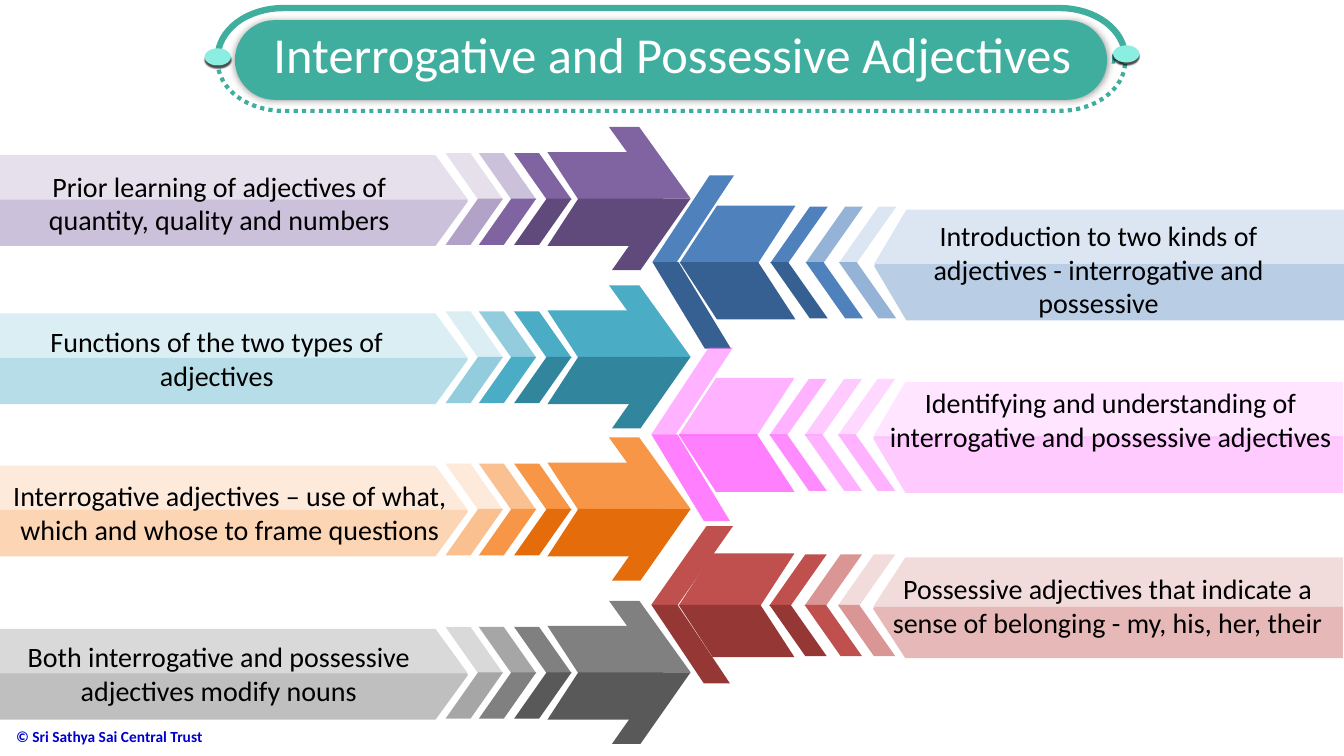
from dataclasses import dataclass
from math import cos, pi, sin

from lxml.etree import SubElement
from pptx import Presentation
from pptx.dml.color import RGBColor
from pptx.enum.dml import MSO_LINE_DASH_STYLE as Dash
from pptx.enum.shapes import MSO_SHAPE as Shape
from pptx.enum.text import MSO_ANCHOR as Anchor, MSO_AUTO_SIZE as AutoSize, PP_ALIGN as Align
from pptx.oxml.ns import qn
from pptx.util import Inches, Pt

COLOURS = {"white": "FFFFFF", "black": "000000", "green": "3FAE9E",
           "mint": "8AEFE0", "navy": "0000CC"}

# Upper and lower colours of the near, middle and far chevrons, the head and the band.
# A fourth byte gives the opacity.
ARROW_COLOURS = {
    "purple": "8064A2 604A7B CCC1DA 8064A2 E6E0EC B3A2C7 8064A2 604A7B E6E0EC CCC1DA",
    "blue": "4F81BD 376092 95B3D7 4F81BD DCE6F2 95B3D7 4F81BD 376092 DCE6F2 B9CDE5",
    "teal": "4BACC6 31859C 93CDDD 4BACC6 DBEEF4 93CDDD 4BACC6 31859C DBEEF4 B7DEE8",
    "pink": "FF99FFBF FF66FFBF FF99FF80 FF66FF80 FFCCFFBF FF99FFBF "
            "FF66FF80 FF00FF80 FFCCFF80 FF99FF80",
    "orange": "F79646 E46C0A FAC090 F79646 FDEADA FAC090 F79646 E46C0A FDEADA FCD5B5",
    "red": "C0504D 953735 D99694 C0504D F2DCDB D99694 C0504D 953735 F2DCDB E6B9B8",
    "grey": "808080 595959 A6A6A6 808080 D9D9D9 A6A6A6 808080 595959 D9D9D9 BFBFBF",
}


@dataclass(frozen=True)
class Side:
    """Horizontal layout shared by the arrows that come in from one edge."""
    mirrored: bool
    outer: float
    shoulder: float
    tip: float
    notch: float
    chevrons: tuple[float, float, float]
    heads: tuple[tuple[float, float, float], tuple[float, float, float]]  # left, width, slant
    shaft: float
    overlap: float


@dataclass(frozen=True)
class Arrow:
    side: Side
    colour: str
    top: float
    half: float
    head_height: float
    text: str
    text_frame: tuple[float, float, float, float]
    shift: float = 0


LEFT = Side(True, 0, 4.32, 4.64, 4.63, (5.1, 4.75, 4.42),
            ((6.04, 0.81, 0.718), (6.07, 0.78, 0.701)), 5.43, 0.03)
RIGHT = Side(False, 13.33, 8.99, 8.67, 8.69, (7.64, 7.99, 8.32),
             ((6.47, 0.81, 0.701), (6.47, 0.78, 0.668)), 6.74, 0.04)

ARROWS = [
    Arrow(LEFT, "purple", 1.54, 0.46, 0.71,
          "Prior learning of adjectives of quantity, quality and numbers", (0.03, 1.63, 4.29, 0.77)),
    Arrow(RIGHT, "blue", 2.08, 0.56, 0.86,
          "Introduction to two kinds of adjectives - interrogative and possessive",
          (8.67, 2.12, 4.45, 1.11)),
    Arrow(LEFT, "teal", 3.11, 0.46, 0.71,
          "Functions of the two types of adjectives", (0.01, 3.17, 4.28, 0.77)),
    Arrow(RIGHT, "pink", 3.79, 0.56, 0.86,
          "Identifying and understanding of interrogative and possessive adjectives",
          (8.71, 3.78, 4.61, 1.34), -0.01),
    Arrow(LEFT, "orange", 4.62, 0.46, 0.71,
          "Interrogative adjectives – use of what, which and whose to frame questions",
          (-0.02, 4.7, 4.6, 0.77)),
    Arrow(RIGHT, "red", 5.53, 0.51, 0.78,
          "Possessive adjectives that indicate a sense of belonging - my, his, her, their",
          (8.66, 5.62, 4.65, 0.77), -0.01),
    Arrow(LEFT, "grey", 6.24, 0.46, 0.71,
          "Both interrogative and possessive adjectives modify nouns", (0.03, 6.3, 4.28, 0.77)),
]


def paint(shape, colour: str) -> None:
    """Fill without line or shadow; a fourth byte in the colour is its opacity."""
    shape.shadow.inherit = False
    shape.fill.solid()
    shape.fill.fore_color.rgb = RGBColor.from_string(colour[:6])
    if colour[6:]:
        opacity = round(int(colour[6:], 16) / 255 * 100) * 1000
        tone = shape.element.spPr.find(f".//{qn('a:srgbClr')}")
        SubElement(tone, qn("a:alpha"), val=str(opacity))
    shape.line.fill.background()


def add_preset(shapes, kind: Shape, frame: tuple, colour: str, adjustment: float | None = None):
    shape = shapes.add_shape(kind, *map(Inches, frame))
    paint(shape, colour)
    if adjustment is not None:
        shape.adjustments[0] = adjustment
    return shape


def add_outline(shapes, points: list[tuple[float, float]], colour: str):
    start, *rest = [(Inches(x), Inches(y)) for x, y in points]
    builder = shapes.build_freeform(*start)
    builder.add_line_segments(rest, close=True)
    shape = builder.convert_to_shape()
    paint(shape, colour)
    return shape


def add_slant(shapes, arrow: Arrow, frame: tuple, slant: float, colour: str, lower: bool) -> None:
    left, *rest = frame
    shape = add_preset(shapes, Shape.PARALLELOGRAM, (left + arrow.shift, *rest), colour, slant)
    for name, flipped in (("flipH", arrow.side.mirrored), ("flipV", lower)):
        if flipped:
            shape.element.spPr.get_or_add_xfrm().set(name, "1")


def write(box, text: str, size: float, colour: str, align: Align, anchor: Anchor,
          bold: bool = False) -> None:
    frame = box.text_frame
    for name, value in {"word_wrap": True, "auto_size": AutoSize.NONE,
                        "vertical_anchor": anchor}.items():
        setattr(frame, name, value)
    para = frame.paragraphs[0]
    para.alignment = align
    span = para.add_run()
    span.text = text
    for name, value in {"name": "Calibri", "size": Pt(size), "bold": bold}.items():
        setattr(span.font, name, value)
    span.font.color.rgb = RGBColor.from_string(COLOURS[colour])


def add_arrow(page, arrow: Arrow) -> None:
    shapes = page.shapes.add_group_shape().shapes
    side, half = arrow.side, arrow.half
    colours = ARROW_COLOURS[arrow.colour].split()
    near, middle, far, head, band = zip(colours[::2], colours[1::2])
    seam = arrow.top + half - side.overlap
    shaft_height = half + 0.01

    for left, pair in zip(side.chevrons, (near, middle, far)):
        for lower, top in enumerate((seam - half + 0.01, seam)):
            add_slant(shapes, arrow, (left, top, 0.57, half), 0.702, pair[lower], bool(lower))
    for lower, top in enumerate((seam - arrow.head_height, seam)):
        left, width, slant = side.heads[lower]
        add_slant(shapes, arrow, (left, top, width, arrow.head_height), slant,
                  head[lower], bool(lower))
    for lower, top in enumerate((seam - half, seam)):
        add_slant(shapes, arrow, (side.shaft, top, 1.15, shaft_height), 0.651,
                  head[lower], bool(lower))

    inner = arrow.top + half
    edges = ((arrow.top, inner - 0.02, inner), (inner - 0.02 + half, inner, inner - 0.02))
    for colour, (rim, point, middle_line) in zip(band, edges):
        corners = [(side.outer, rim), (side.shoulder, rim), (side.tip, point),
                   (side.notch, middle_line), (side.outer, middle_line)]
        add_outline(shapes, [(x + arrow.shift, y) for x, y in corners], colour)

    box = shapes.add_textbox(*map(Inches, arrow.text_frame))
    write(box, arrow.text, 20, "black", Align.CENTER, Anchor.TOP)


def half_capsule(base: float, rise: float) -> list[tuple[float, float]]:
    """Points of a bar with two rounded corners, standing or hanging from its base line."""
    angles = [step * pi / 32 for step in range(17)]
    left = [(2.81 - 0.65 * cos(a), base + rise * sin(a)) for a in angles]
    right = [(10.51 + 0.65 * cos(a), base + rise * sin(a)) for a in reversed(angles)]
    return left + right


def add_shadow(shape, blur: float, distance: float, opacity: int) -> None:
    effects = shape.element.spPr.find(qn("a:effectLst"))
    shadow = SubElement(effects, qn("a:outerShdw"), blurRad=str(Pt(blur)),
                        dist=str(Pt(distance)), dir="5400000", rotWithShape="0")
    tone = SubElement(shadow, qn("a:srgbClr"), val=COLOURS["black"])
    SubElement(tone, qn("a:alpha"), val=str(opacity * 1000))


def add_title(page) -> None:
    shapes = page.shapes.add_group_shape().shapes
    for base, rise, width, dash in ((0.57, -0.49, 4.5, Dash.SOLID),
                                    (0.61, 0.49, 3, Dash.ROUND_DOT)):
        rim = add_outline(shapes, half_capsule(base, rise), COLOURS["white"])
        rim.line.color.rgb = RGBColor.from_string(COLOURS["green"])
        rim.line.width = Pt(width)
        rim.line.dash_style = dash
    add_preset(shapes, Shape.ROUNDED_RECTANGLE, (2.22, 0.16, 8.81, 0.81), COLOURS["white"], 0.5)
    pill = add_preset(shapes, Shape.ROUNDED_RECTANGLE, (2.33, 0.2, 8.65, 0.79),
                      COLOURS["green"], 0.5)
    add_shadow(pill, 5, 0, 40)
    for left, top in ((11.04, 0.45), (2.03, 0.48)):
        knob = add_preset(shapes, Shape.OVAL, (left, top, 0.26, 0.17), COLOURS["mint"])
        add_shadow(knob, 1, 2.2, 70)

    title = page.shapes.title
    title.left, title.top, title.width, title.height = map(Inches, (2.58, 0.18, 8.18, 0.71))
    write(title, "Interrogative and Possessive Adjectives", 36, "white", Align.CENTER, Anchor.TOP)
    page.shapes.element.append(title.element)  # bring in front of the pill


def main() -> None:
    deck = Presentation()
    deck.slide_width, deck.slide_height = Inches(13.33), Inches(7.5)
    page = deck.slides.add_slide(deck.slide_layouts[5])
    footer = page.shapes.add_textbox(*map(Inches, (-0.44, 7.1, 4.03, 0.41)))
    footer.text_frame.margin_left = Inches(0.6)
    write(footer, "© Sri Sathya Sai Central Trust", 11, "navy", Align.LEFT, Anchor.MIDDLE, True)
    for arrow in ARROWS:
        add_arrow(page, arrow)
    add_title(page)
    deck.save("out.pptx")


if __name__ == "__main__":
    main()
